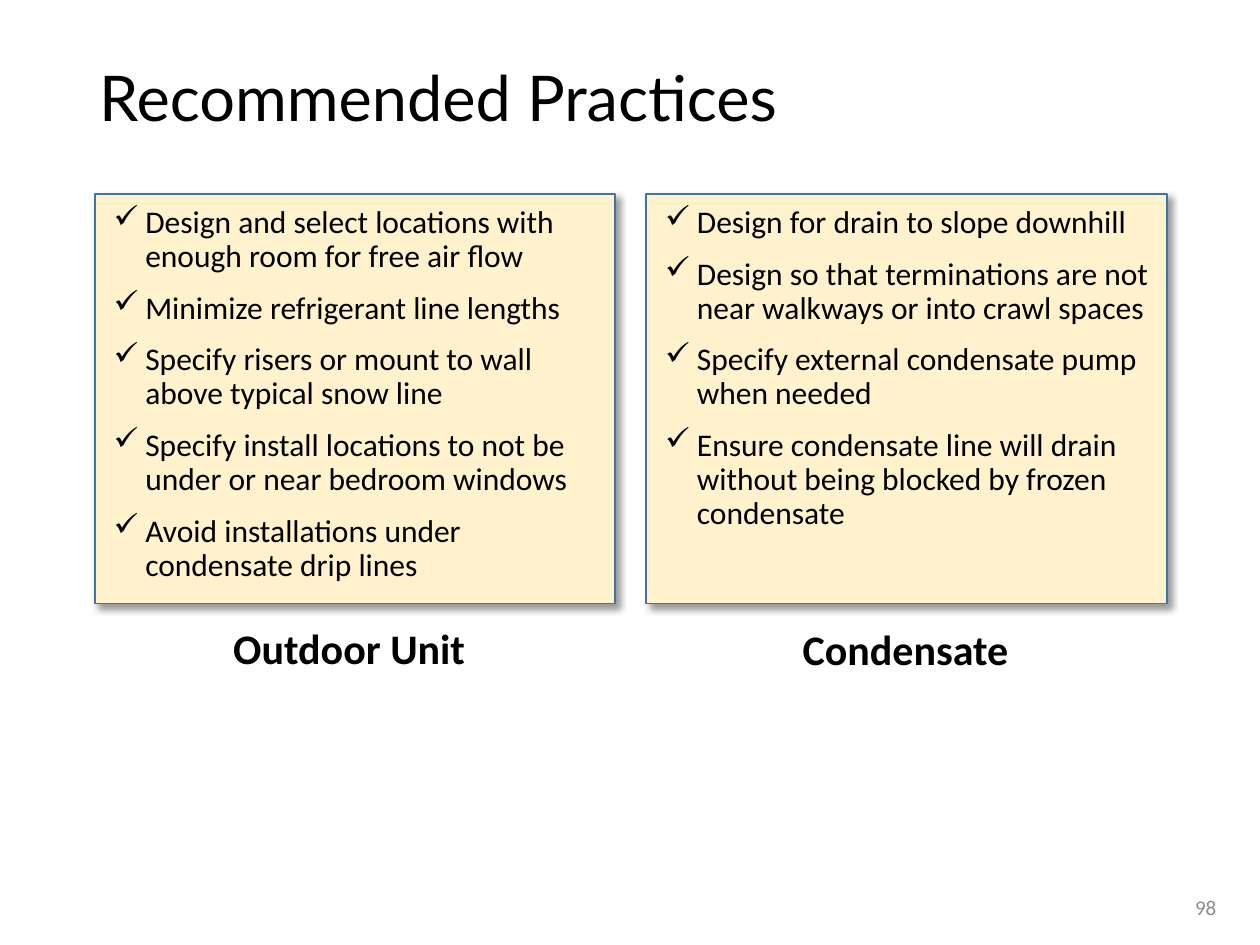
"""Build the Recommended Practices slide with two checklist panels."""
from lxml import etree
from pptx import Presentation
from pptx.dml.color import RGBColor
from pptx.enum.shapes import MSO_SHAPE
from pptx.enum.text import MSO_ANCHOR, PP_ALIGN
from pptx.oxml import parse_xml
from pptx.oxml.ns import qn
from pptx.util import Cm, Pt

RECTANGLE = MSO_SHAPE.RECTANGLE
TOP, MIDDLE = MSO_ANCHOR.TOP, MSO_ANCHOR.MIDDLE
LEFT, CENTER, RIGHT = PP_ALIGN.LEFT, PP_ALIGN.CENTER, PP_ALIGN.RIGHT

COLORS = {
    "panel": "FFF2CC",
    "border": "43739E",
    "text": "000000",
    "number": "8C8C8C",
}
SHADOW = (
    '<a:outerShdw xmlns:a="http://schemas.openxmlformats.org/drawingml/2006/main" '
    'blurRad="50800" dist="38100" dir="2700000" algn="tl" rotWithShape="0">'
    '<a:srgbClr val="000000"><a:alpha val="40000"/></a:srgbClr></a:outerShdw>'
)
PANELS = [
    {
        "left": 1.91,
        "caption": "Outdoor Unit",
        "caption_box": (4.17, 12.42, 5.74, 1.27),
        "items": [
            "Design and select locations with enough room for free air flow",
            "Minimize refrigerant line lengths",
            "Specify risers or mount to wall above typical snow line",
            "Specify install locations to not be under or near bedroom windows",
            "Avoid installations under condensate drip lines",
        ],
    },
    {
        "left": 13.03,
        "caption": "Condensate",
        "caption_box": (15.6, 12.45, 5.31, 1.27),
        "items": [
            "Design for drain to slope downhill",
            "Design so that terminations are not near walkways or into crawl spaces",
            "Specify external condensate pump when needed",
            "Ensure condensate line will drain without being blocked by frozen condensate",
        ],
    },
]


def add_text_box(box, anchor=TOP):
    text_frame = slide.shapes.add_textbox(*[Cm(length) for length in box]).text_frame
    text_frame.word_wrap = True
    text_frame.vertical_anchor = anchor
    return text_frame


def add_run(paragraph, text, size, color="text", font_name="Calibri", bold=False, align=LEFT):
    paragraph.alignment = align
    run = paragraph.add_run()
    run.text = text
    run.font.name = font_name
    run.font.size = Pt(size)
    run.font.bold = bold
    run.font.color.rgb = RGBColor.from_string(COLORS[color])


presentation = Presentation()
presentation.slide_width = Cm(25.4)
presentation.slide_height = Cm(19.05)
slide = presentation.slides.add_slide(presentation.slide_layouts[6])

title = add_text_box((1.75, 0.76, 21.89, 2.54), MIDDLE).paragraphs[0]
title.line_spacing = 0.9
add_run(title, "Recommended Practices", 36, font_name="Lato")

for panel in PANELS:
    shape = slide.shapes.add_shape(RECTANGLE, Cm(panel["left"]), Cm(3.91), Cm(10.49), Cm(8.26))
    shape.fill.solid()
    shape.fill.fore_color.rgb = RGBColor.from_string(COLORS["panel"])
    shape.line.color.rgb = RGBColor.from_string(COLORS["border"])
    shape.line.width = Pt(1)
    shape.shadow.inherit = False
    shape._element.spPr.find(qn("a:effectLst")).append(parse_xml(SHADOW))

    checklist = add_text_box((panel["left"] + 0.13, 4.04, 10.49, 13.11))
    for index, item in enumerate(panel["items"]):
        paragraph = checklist.add_paragraph() if index else checklist.paragraphs[0]
        properties = paragraph._p.get_or_add_pPr()
        properties.set("marL", str(Cm(0.64)))
        properties.set("indent", str(-Cm(0.64)))
        etree.SubElement(properties, qn("a:buChar")).set("char", "✓")
        paragraph.line_spacing = 0.9
        if index:
            paragraph.space_before = Pt(10)
        add_run(paragraph, item, 18)

    caption = add_text_box(panel["caption_box"]).paragraphs[0]
    add_run(caption, panel["caption"], 24, bold=True, align=CENTER)

slide_number = add_text_box((19.05, 17.78, 5.72, 1.02), MIDDLE).paragraphs[0]
add_run(slide_number, "98", 12, "number", align=RIGHT)

presentation.save("out.pptx")
